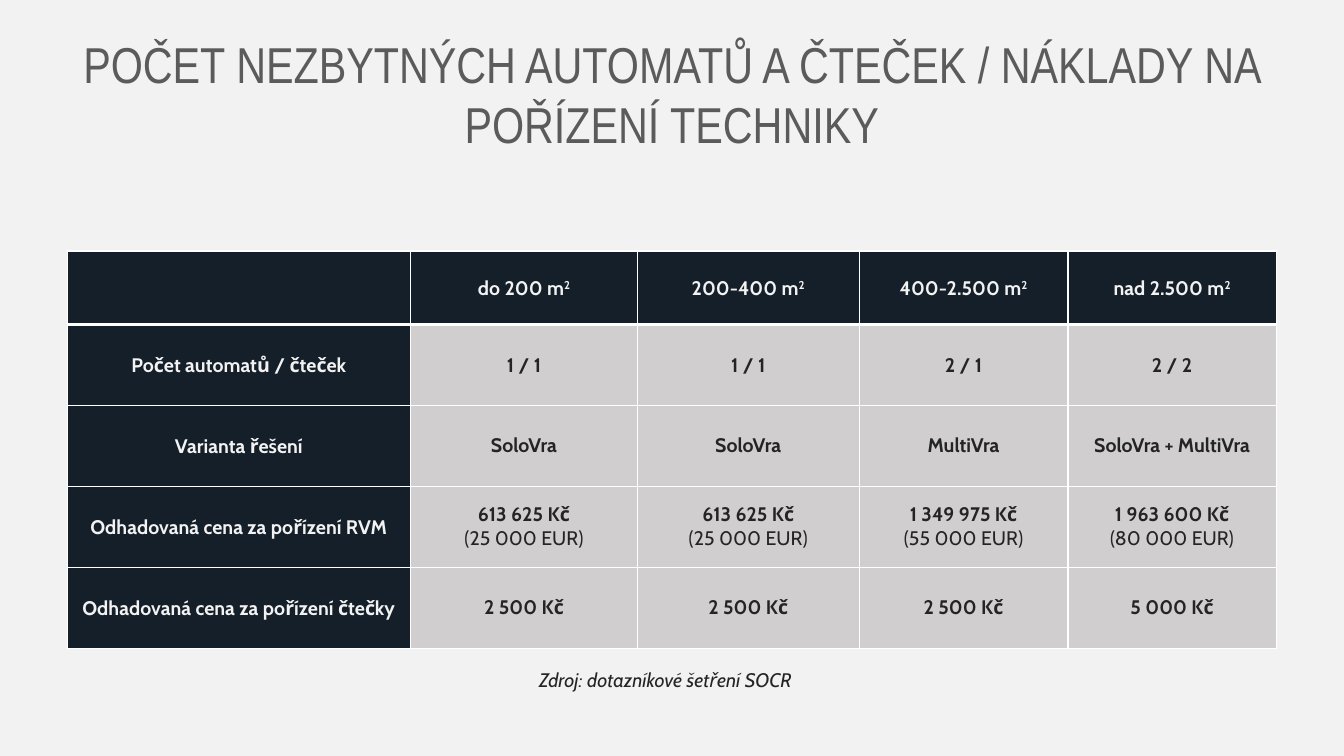
"""Build the slide on machine counts and equipment costs by shop size."""
from lxml.etree import SubElement
from pptx import Presentation
from pptx.dml.color import RGBColor
from pptx.enum.text import MSO_ANCHOR as Anchor, PP_ALIGN as Align
from pptx.oxml.ns import qn
from pptx.util import Pt

PAPER = RGBColor(0xF2, 0xF2, 0xF2)
NAVY = RGBColor(0x15, 0x1F, 0x29)
SILVER = RGBColor(0xD0, 0xCE, 0xCE)
INK = RGBColor(0x24, 0x24, 0x24)
GRAY = RGBColor(0x5B, 0x5B, 0x5B)
WHITE = RGBColor(0xFF, 0xFF, 0xFF)

TITLE = "POČET NEZBYTNÝCH AUTOMATŮ A ČTEČEK / NÁKLADY NA POŘÍZENÍ TECHNIKY"
SOURCE = "Zdroj: dotazníkové šetření SOCR"
COLUMN_WIDTHS = [245.3, 162, 158.4, 149.2, 148.7]
ROW_HEIGHTS = [52.5] + [57.8] * 4
SHOP_SIZES = ["do 200 m", "200-400 m", "400-2.500 m", "nad 2.500 m"]
ROWS = [
    ["Počet automatů / čteček", "1 / 1", "1 / 1", "2 / 1", "2 / 2"],
    ["Varianta řešení", "SoloVra", "SoloVra", "MultiVra", "SoloVra + MultiVra"],
    ["Odhadovaná cena za pořízení RVM", "613 625 Kč\n(25 000 EUR)",
     "613 625 Kč\n(25 000 EUR)", "1 349 975 Kč\n(55 000 EUR)",
     "1 963 600 Kč\n(80 000 EUR)"],
    ["Odhadovaná cena za pořízení čtečky", "2 500 Kč", "2 500 Kč", "2 500 Kč",
     "5 000 Kč"],
]


def add_text(para, text, size=14, font="Cabin", color=INK, bold=False,
             italic=False, raised=False):
    span = para.add_run()
    span.text = text
    span.font.size = Pt(size)
    span.font.name = font
    span.font.color.rgb = color
    span.font.bold = bold
    span.font.italic = italic
    if raised:
        span._r.get_or_add_rPr().set("baseline", "30000")


class Page:
    def __init__(self, deck):
        self.slide = deck.slides.add_slide(deck.slide_layouts[6])
        self.slide.background.fill.solid()
        self.slide.background.fill.fore_color.rgb = PAPER

    def text_box(self, text, left, top, width, height, align=Align.LEFT,
                 anchor=Anchor.TOP, **style):
        box = self.slide.shapes.add_textbox(Pt(left), Pt(top), Pt(width), Pt(height))
        box.text_frame.word_wrap = True
        box.text_frame.vertical_anchor = anchor
        para = box.text_frame.paragraphs[0]
        para.alignment = align
        add_text(para, text, **style)

    def table(self, left, top, widths, heights):
        frame = self.slide.shapes.add_table(
            len(heights), len(widths), Pt(left), Pt(top), Pt(sum(widths)), Pt(sum(heights)))
        table = frame.table
        table.horz_banding = False
        for column, width in zip(table.columns, widths):
            column.width = Pt(width)
        for row, height in zip(table.rows, heights):
            row.height = Pt(height)
        return table

    def borders(self, cell, top=1, bottom=1):
        properties = cell._tc.get_or_add_tcPr()
        for side, width in (("L", 1), ("R", 1), ("T", top), ("B", bottom)):
            line = SubElement(properties, qn(f"a:ln{side}"), w=str(Pt(width)))
            fill = SubElement(line, qn("a:solidFill"))
            SubElement(fill, qn("a:srgbClr"), val=str(WHITE))

    def cell(self, cell, text, row, column):
        dark = row == 0 or column == 0
        self.borders(cell, top=3 if row == 1 else 1, bottom=3 if row == 0 else 1)
        cell.fill.solid()
        cell.fill.fore_color.rgb = NAVY if dark else SILVER
        cell.vertical_anchor = Anchor.MIDDLE
        cell.margin_left = cell.margin_right = cell.margin_top = Pt(0.7 if dark else 0)
        cell.margin_bottom = Pt(0)
        color = PAPER if dark else INK
        for index, line in enumerate(text.splitlines()):
            frame = cell.text_frame
            para = frame.add_paragraph() if index else frame.paragraphs[0]
            para.alignment = Align.CENTER
            add_text(para, line, color=color, bold=index == 0)
            if row == 0:
                add_text(para, "2", color=color, bold=True, raised=True)


def main():
    deck = Presentation()
    deck.slide_width, deck.slide_height = Pt(960), Pt(540)
    page = Page(deck)
    page.text_box(TITLE, 48, 21.6, 864, 90, align=Align.CENTER, anchor=Anchor.MIDDLE,
                  size=36, font="Arial Narrow", color=GRAY)
    table = page.table(48, 179.3, COLUMN_WIDTHS, ROW_HEIGHTS)
    for row, texts in enumerate([["", *SHOP_SIZES], *ROWS]):
        for column, text in enumerate(texts):
            page.cell(table.cell(row, column), text, row, column)
    page.text_box(SOURCE, 378, 473.8, 204.5, 24.5, italic=True)
    deck.save("out.pptx")


if __name__ == "__main__":
    main()
